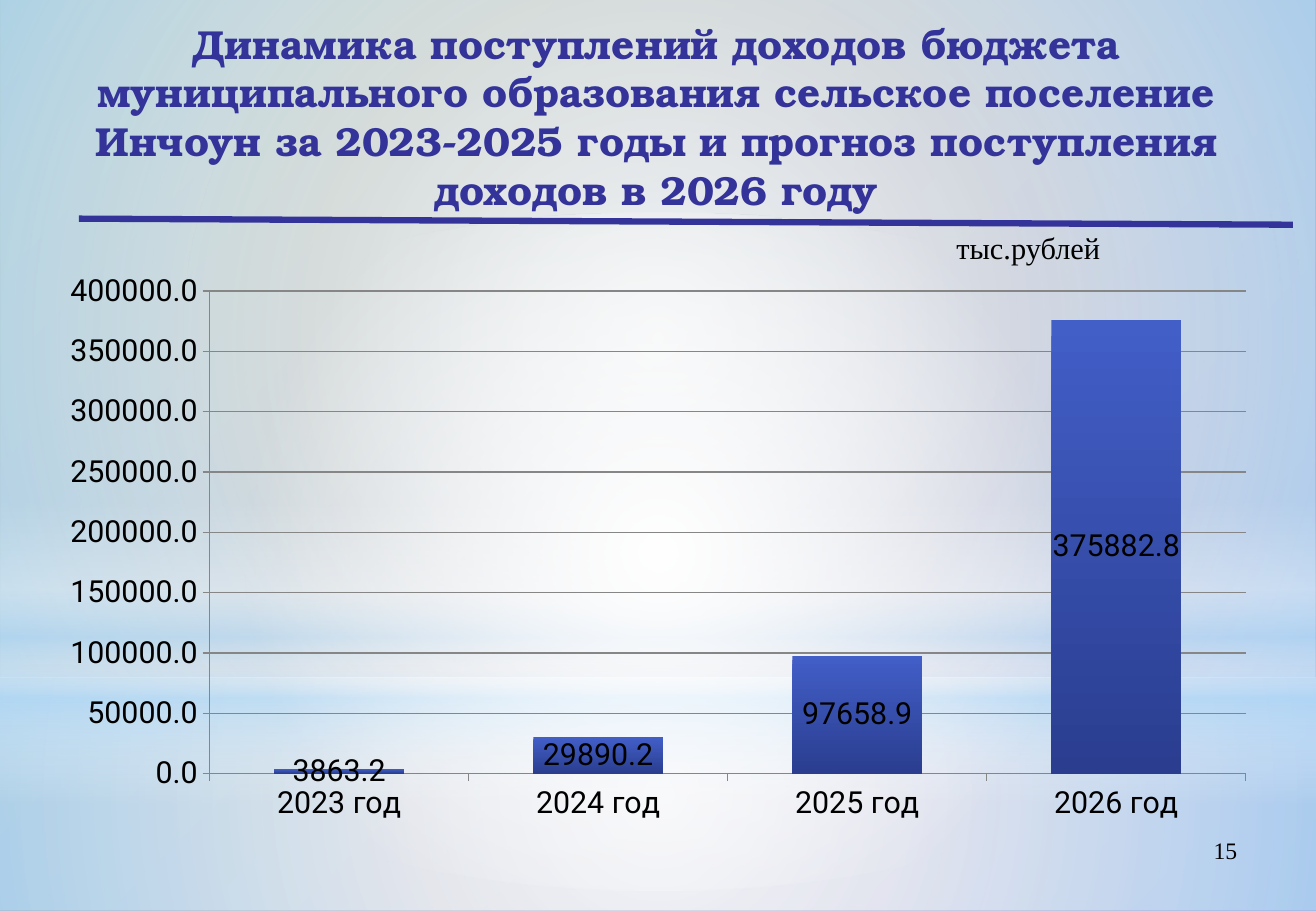
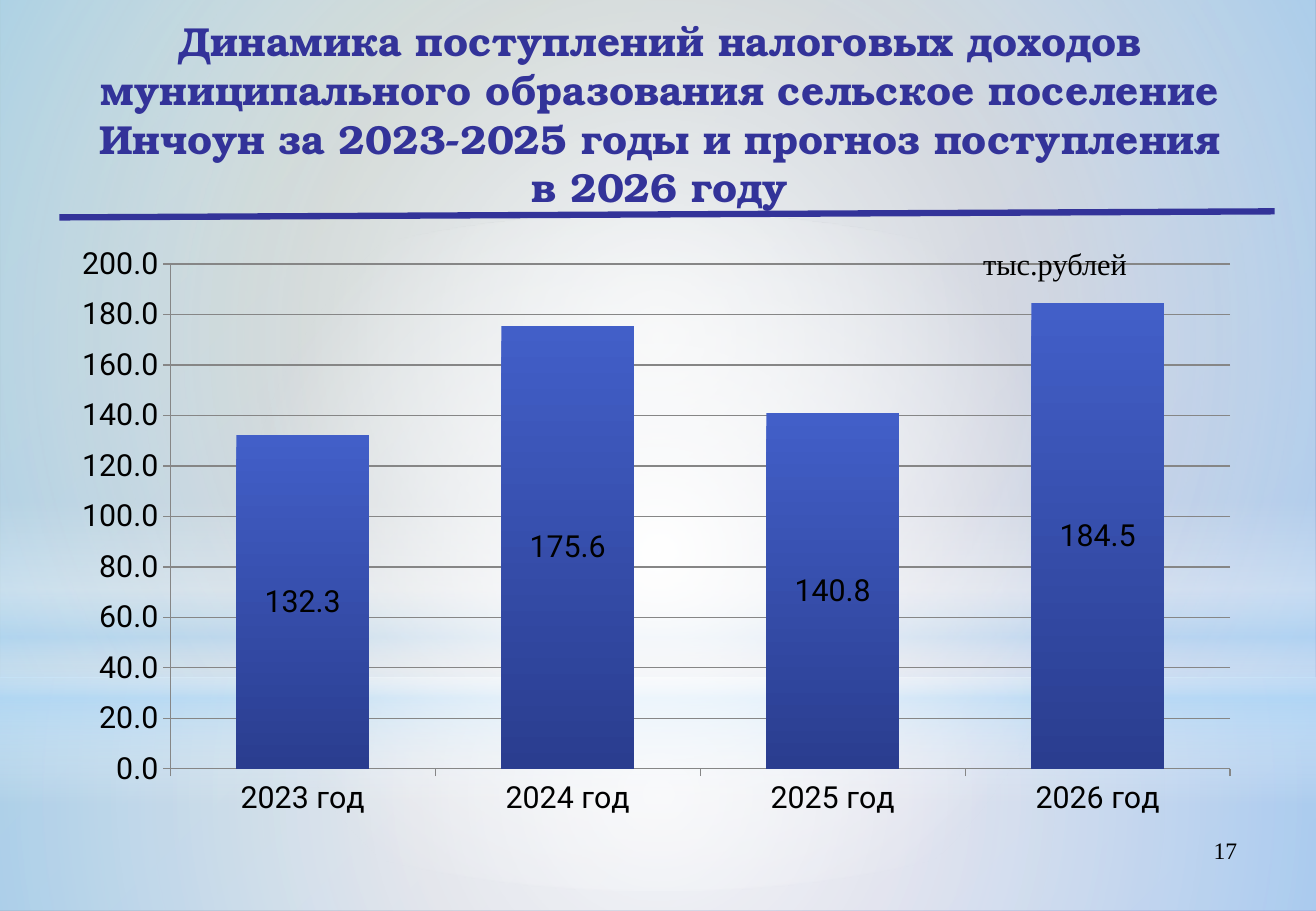
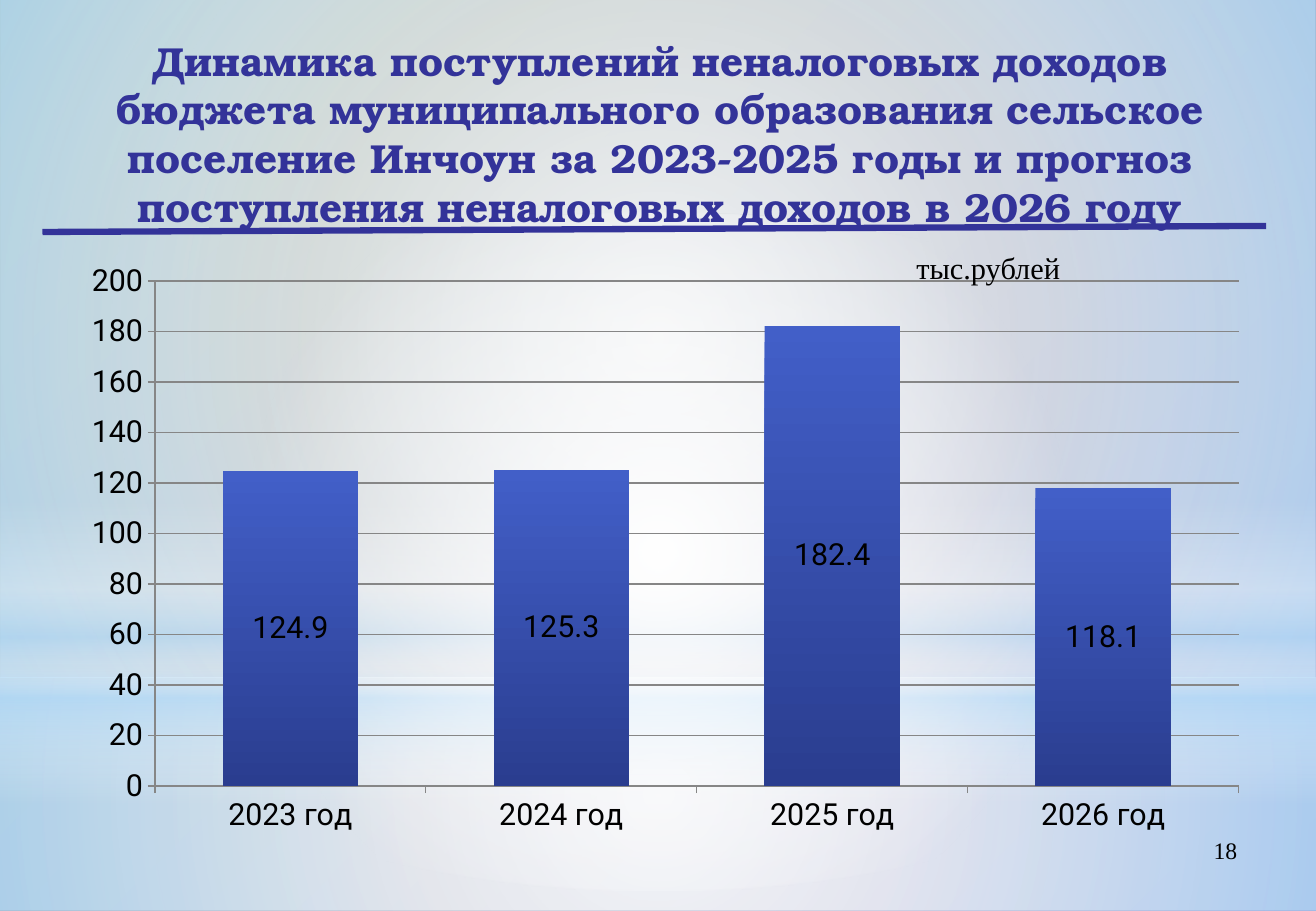
from dataclasses import dataclass

from lxml import etree
from pptx import Presentation
from pptx import util as u
from pptx.chart.data import CategoryChartData
from pptx.dml.color import RGBColor
from pptx.enum import chart as ch, shapes, text
from pptx.oxml import parse_xml
from pptx.oxml.ns import nsdecls, qn


@dataclass(frozen=True)
class Theme:
    accent: str = "333399"
    ink: str = "000000"
    grid: str = "868686"
    bar_top: str = "425FC8"
    bar_bottom: str = "2A3D8F"
    white: str = "FFFFFF"
    sky: str = "B4DCFA"
    back_start: str = "96AB94"
    back_end: str = "8488C4"
    title_font: str = "TeX Gyre Bonum"
    body_font: str = "Times New Roman"
    chart_font: str = "Roboto"
    title_size: int = 24
    body_size: int = 18
    page_size: int = 14


T = Theme()


def set_gradient(fill, owner, stops, angle=None):
    fill.gradient()
    old = next(owner.iter(qn("a:gradFill")))
    gs = "".join(
        f'<a:gs pos="{pos * 1000}"><a:srgbClr val="{color}">'
        f'<a:alpha val="{alpha * 1000}"/></a:srgbClr></a:gs>'
        for pos, color, alpha in stops
    )
    if angle is None:
        shade = '<a:path path="circle"><a:fillToRect l="50000" t="50000" r="50000" b="50000"/></a:path>'
    else:
        shade = f'<a:lin ang="{angle * 60000}" scaled="0"/>'
    new = parse_xml(
        f'<a:gradFill {nsdecls("a")} rotWithShape="1"><a:gsLst>{gs}</a:gsLst>{shade}</a:gradFill>'
    )
    old.getparent().replace(old, new)


def add_text(s, box, content, font, size, color, align, bold=False, wrap=True,
             anchor=text.MSO_ANCHOR.TOP):
    tf = s.shapes.add_textbox(*map(u.Inches, box)).text_frame
    tf.word_wrap = wrap
    tf.vertical_anchor = anchor
    p = tf.paragraphs[0]
    p.alignment = align
    r = p.add_run()
    r.text = content
    r.font.name = font
    r.font.size = u.Pt(size)
    r.font.bold = bold
    r.font.color.rgb = RGBColor.from_string(color)


prs = Presentation()
prs.slide_width, prs.slide_height = u.Inches(10.84), u.Inches(7.5)
layout = prs.slide_layouts[6]
for ph in list(layout.placeholders):
    ph.element.getparent().remove(ph.element)

set_gradient(layout.background.fill, layout.element,
             [(0, T.back_start, 100), (100, T.back_end, 100)], 45)

RECT, OVAL = shapes.MSO_SHAPE.RECTANGLE, shapes.MSO_SHAPE.OVAL
glows = [
    (RECT, 5.58, 1.92, [(0, T.white, 91), (37, T.white, 76), (100, T.sky, 79)], None),
    (RECT, 0, 5.58, [(0, T.white, 89), (48, T.white, 62), (100, T.sky, 79)], None),
    (RECT, 4.12, 2.5, [(0, T.white, 0), (29, T.white, 30), (45, T.sky, 40),
                       (55, T.white, 26), (65, T.sky, 60), (100, T.white, 0)], 90),
    (OVAL, 1.75, 5.58, [(0, T.white, 100), (56, T.white, 0)], None),
]

slide_data = [
    dict(
        page="15",
        title="Динамика поступлений доходов бюджета муниципального образования сельское поселение "
              "Инчоун за 2023-2025 годы и прогноз поступления доходов в 2026 году",
        title_at=(0.53, 0.27), rule=(0.65, 1.8, 10.65, 1.85), unit_at=(7.78, 1.84),
        chart=(0.55, 2.16, 9.81, 4.73), plot=(0.12, 0.05, 0.87, 0.84),
        values=(3863.2, 29890.2, 97658.9, 375882.8), top=400000, step=50000, axis_format="0.0",
    ),
    dict(
        page="17",
        title="Динамика поступлений налоговых доходов муниципального образования сельское поселение "
              "Инчоун за 2023-2025 годы и прогноз поступления в 2026 году",
        title_at=(0.56, 0.25), rule=(0.49, 1.79, 10.5, 1.74), unit_at=(8, 1.97),
        chart=(0.52, 1.93, 9.81, 4.89), plot=(0.09, 0.05, 0.89, 0.85),
        values=(132.3, 175.6, 140.8, 184.5), top=200, step=20, axis_format="0.0",
    ),
    dict(
        page="18",
        title="Динамика поступлений неналоговых доходов бюджета муниципального образования сельское "
              "поселение Инчоун за 2023-2025 годы и прогноз поступления неналоговых доходов в 2026 году",
        title_at=(0.56, 0.41), rule=(0.35, 1.91, 10.43, 1.86), unit_at=(7.45, 2),
        chart=(0.59, 2.07, 9.81, 4.89), plot=(0.07, 0.05, 0.91, 0.85),
        values=(124.9, 125.3, 182.4, 118.1), top=200, step=20, axis_format="0",
    ),
]

slides = [prs.slides.add_slide(layout) for _ in slide_data]

for kind, top, height, stops, angle in glows:
    sp = slides[0].shapes.add_shape(kind, 0, u.Inches(top), prs.slide_width, u.Inches(height))
    sp.shadow.inherit = False
    sp.line.fill.background()
    set_gradient(sp.fill, sp.element, stops, angle)
    layout.shapes.element.append(sp.element)

for s, d in zip(slides, slide_data):
    add_text(s, (7.76, 6.83, 2.53, 0.52), d["page"], T.body_font, T.page_size, T.ink,
             text.PP_ALIGN.RIGHT)
    add_text(s, (*d["title_at"], 9.75, 1.37), d["title"], T.title_font, T.title_size, T.accent,
             text.PP_ALIGN.CENTER, bold=True, anchor=text.MSO_ANCHOR.MIDDLE)

    rule = s.shapes.add_connector(shapes.MSO_CONNECTOR.STRAIGHT, *map(u.Inches, d["rule"]))
    rule.line.color.rgb = RGBColor.from_string(T.accent)
    rule.line.width = u.Pt(3.75)
    etree.SubElement(rule.element.spPr, qn("a:effectLst"))

    cd = CategoryChartData(number_format="0.0")
    cd.categories = [f"{year} год" for year in range(2023, 2027)]
    cd.add_series("Series 1", d["values"])
    chart = s.shapes.add_chart(ch.XL_CHART_TYPE.COLUMN_STACKED,
                               *map(u.Inches, d["chart"]), cd).chart
    chart.has_legend = False
    chart.has_title = False
    chart.font.name = T.chart_font
    chart.font.size = u.Pt(T.body_size)
    chart.font.color.rgb = RGBColor.from_string(T.ink)

    plot = chart.plots[0]
    plot.gap_width, plot.overlap = 100, 100
    plot.vary_by_categories = False
    plot.has_data_labels = True
    labels = plot.data_labels
    labels.show_value = True
    labels.number_format = "0.0"
    labels.number_format_is_linked = False
    labels.position = ch.XL_LABEL_POSITION.CENTER
    set_gradient(plot.series[0].format.fill, chart.element,
                 [(0, T.bar_top, 100), (100, T.bar_bottom, 100)], 90)

    val_axis, cat_axis = chart.value_axis, chart.category_axis
    val_axis.minimum_scale, val_axis.maximum_scale = 0, d["top"]
    val_axis.major_unit = d["step"]
    val_axis.has_major_gridlines = True
    val_axis.tick_labels.number_format = d["axis_format"]
    val_axis.tick_labels.number_format_is_linked = False
    for axis in (val_axis, cat_axis):
        axis.major_tick_mark = ch.XL_TICK_MARK.OUTSIDE
        axis.minor_tick_mark = ch.XL_TICK_MARK.NONE
    for part in (val_axis, cat_axis, val_axis.major_gridlines):
        part.format.line.color.rgb = RGBColor.from_string(T.grid)
        part.format.line.width = u.Pt(0.75)

    area = next(chart.element.iter(qn("c:plotArea")))
    for old in area.findall(qn("c:layout")):
        area.remove(old)
    x, y, w, h = d["plot"]
    area.insert(0, parse_xml(
        f'<c:layout {nsdecls("c")}><c:manualLayout><c:layoutTarget val="inner"/>'
        f'<c:xMode val="edge"/><c:yMode val="edge"/><c:x val="{x}"/><c:y val="{y}"/>'
        f'<c:w val="{w}"/><c:h val="{h}"/></c:manualLayout></c:layout>'
    ))

    add_text(s, (*d["unit_at"], 1.4, 0.4), "тыс.рублей", T.body_font, T.body_size, T.ink,
             text.PP_ALIGN.LEFT, wrap=False)

prs.save("out.pptx")
